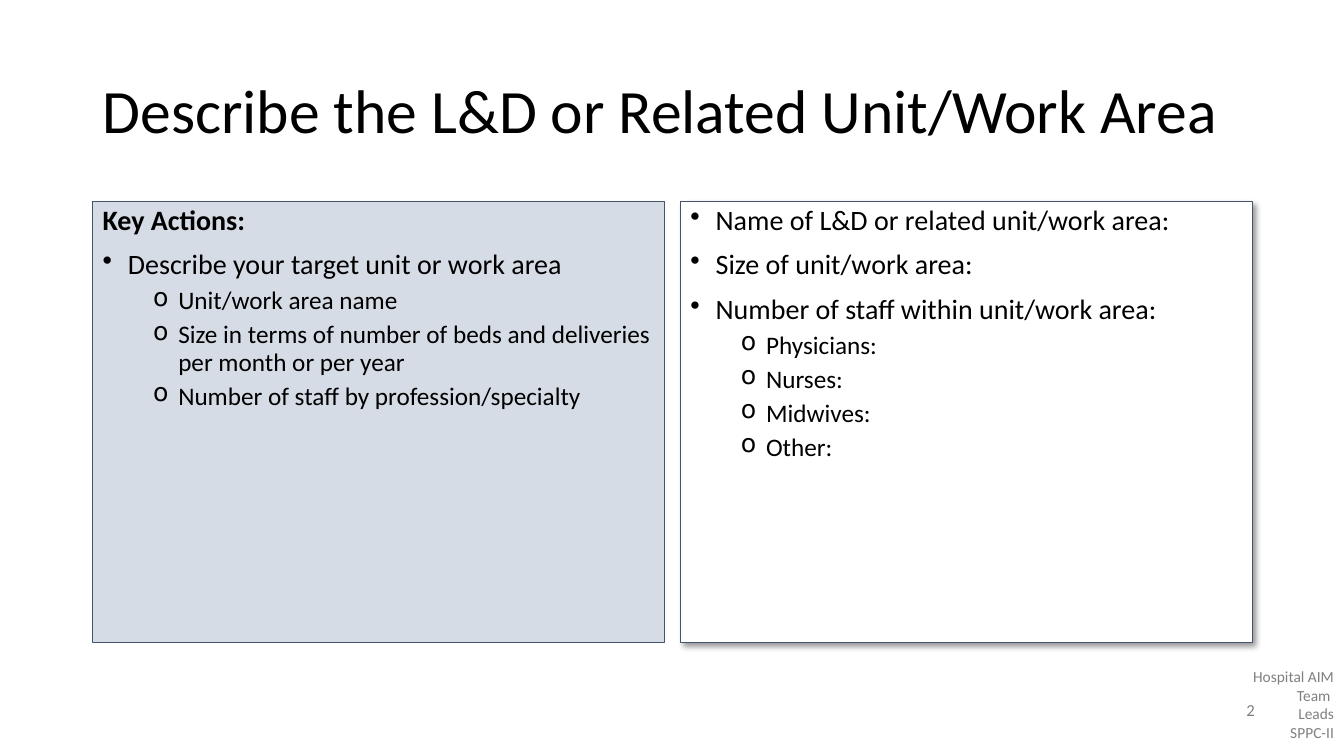
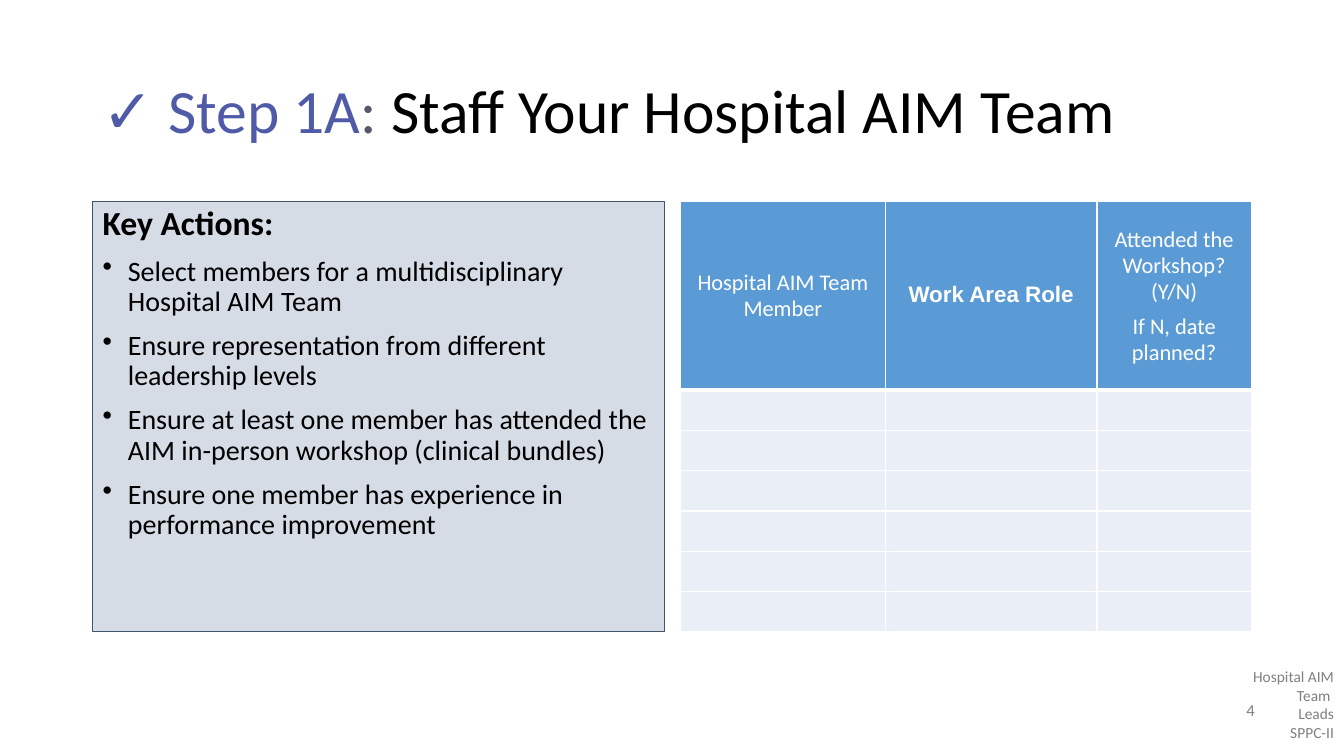
from dataclasses import dataclass

from lxml.etree import SubElement
from pptx import Presentation
from pptx.dml.color import RGBColor
from pptx.enum.shapes import MSO_SHAPE
from pptx.enum.text import MSO_ANCHOR, PP_ALIGN
from pptx.oxml.ns import qn
from pptx.util import Inches, Pt

FOOT = ["Hospital AIM Team ", "Leads", "SPPC-II"]

SLIDES = [
    {
        "page": "2",
        "title": [("Describe the L&D or Related Unit/Work Area", "black")],
        "tall": 4.37,
        "left": [
            ("head", "Key Actions:"),
            ("dot", "Describe your target unit or work area"),
            ("ring", "Unit/work area name"),
            ("ring", "Size in terms of number of beds and deliveries per month or per year"),
            ("ring", "Number of staff by profession/specialty"),
        ],
        "right": [
            ("dot", "Name of L&D or related unit/work area:"),
            ("dot", "Size of unit/work area:"),
            ("dot", "Number of staff within unit/work area:"),
            ("ring", "Physicians:"),
            ("ring", "Nurses:"),
            ("ring", "Midwives:"),
            ("ring", "Other:"),
        ],
    },
    {
        "page": "4",
        "title": [
            ("✓ Step 1A", "step"),
            (": ", "colon"),
            ("Staff Your Hospital AIM Team", "black"),
        ],
        "tall": 4.27,
        "left": [
            ("lead", "Key Actions:"),
            ("dot", "Select members for a multidisciplinary Hospital AIM Team"),
            ("dot", "Ensure representation from different leadership levels"),
            ("dot", "Ensure at least one member has attended the AIM in-person workshop (clinical bundles)"),
            ("dot", "Ensure one member has experience in performance improvement"),
        ],
        "table": {
            "heads": [
                (["Hospital AIM Team Member"], 2.03),
                (["Work Area Role"], 2.1),
                (["Attended the Workshop? (Y/N)", "If N, date planned?"], 1.53),
            ],
            "strong": 1,
            "blanks": 6,
        },
    },
]


@dataclass(frozen=True)
class Theme:
    font: str = "Calibri"
    alt: str = "Arial"
    black: str = "000000"
    white: str = "FFFFFF"
    grey: str = "808080"
    step: str = "505BA7"
    colon: str = "57576E"
    panel: str = "D6DCE5"
    edge: str = "44546A"
    head: str = "5B9BD5"
    row: str = "EAEFF7"
    title: int = 44
    cell: int = 16
    page: int = 12
    foot: int = 11


T = Theme()
WIDE, HIGH = 13.33, 7.5
LEFT, TOP, SPAN, GAP = 0.92, 2, 11.5, 0.16
COL = (SPAN - GAP) / 2
RIGHT = LEFT + COL + GAP
ROW = 0.4

STYLES = {
    "head": (20, True, 10, 0, None),
    "lead": (24, True, 10, 0, None),
    "dot": (20, False, 10, 0.25, "•"),
    "ring": (18, False, 5, 0.75, "o"),
}


def paint(run, size, tint, bold=False, face=T.font):
    font = run.font
    font.name, font.size, font.bold = face, Pt(size), bold
    font.color.rgb = RGBColor.from_string(tint)


def fill(part, tint):
    part.fill.solid()
    part.fill.fore_color.rgb = RGBColor.from_string(tint)


def write(frame, lines, size, tint, align, bold=False, face=T.font):
    frame.word_wrap = True
    frame.text = "\n".join(lines)
    for para in frame.paragraphs:
        para.alignment = align
        paint(para.runs[0], size, tint, bold, face)


def text_box(slide, *place):
    frame = slide.shapes.add_textbox(*map(Inches, place)).text_frame
    frame.word_wrap = True
    return frame


def add_frame(slide, data):
    foot = text_box(slide, WIDE - 1.16, 6.57, 1.16, 0.84)
    write(foot, FOOT, T.foot, T.grey, PP_ALIGN.RIGHT)
    title = text_box(slide, LEFT, 0.4, SPAN, 1.45)
    title.vertical_anchor = MSO_ANCHOR.MIDDLE
    para = title.paragraphs[0]
    para.line_spacing = 0.9
    for text, tint in data["title"]:
        run = para.add_run()
        run.text = text
        paint(run, T.title, getattr(T, tint))
    page = text_box(slide, 12.17, 6.84, 0.47, 0.4)
    page.vertical_anchor = MSO_ANCHOR.MIDDLE
    write(page, [data["page"]], T.page, T.grey, PP_ALIGN.CENTER)


def add_shade(shape):
    box = shape._element.spPr.find(qn("a:effectLst"))
    shade = SubElement(box, qn("a:outerShdw"), blurRad=str(Pt(4)),
                       dist=str(Pt(3)), dir=str(45 * 60000),
                       algn="tl", rotWithShape="0")
    tint = SubElement(shade, qn("a:srgbClr"), val=T.black)
    SubElement(tint, qn("a:alpha"), val="40000")


def add_panel(slide, left, tall, items, tint, shade=False):
    place = map(Inches, (left, TOP, COL, tall))
    shape = slide.shapes.add_shape(MSO_SHAPE.RECTANGLE, *place)
    shape.shadow.inherit = False
    fill(shape, tint)
    shape.line.color.rgb = RGBColor.from_string(T.edge)
    shape.line.width = Pt(0.75)
    if shade:
        add_shade(shape)
    frame = shape.text_frame
    frame.vertical_anchor = MSO_ANCHOR.TOP
    frame.word_wrap = True
    frame.text = "\n".join(text for _, text in items)
    for spot, (para, (kind, _)) in enumerate(zip(frame.paragraphs, items)):
        size, bold, space, dent, mark = STYLES[kind]
        para.alignment = PP_ALIGN.LEFT
        para.line_spacing = 0.9
        para.space_before = Pt(space if spot else 0)
        if mark:
            props = para._p.get_or_add_pPr()
            props.set("marL", str(Inches(dent)))
            props.set("indent", str(Inches(-0.25)))
            SubElement(props, qn("a:buChar"), char=mark)
        paint(para.runs[0], size, T.black, bold)


def add_rules(cell, base):
    props = cell._tc.get_or_add_tcPr()
    sides = {"lnL": 1, "lnR": 1, "lnT": 1, "lnB": base}
    for side, width in sides.items():
        line = SubElement(props, qn("a:" + side), w=str(Pt(width)))
        solid = SubElement(line, qn("a:solidFill"))
        SubElement(solid, qn("a:srgbClr"), val=T.white)


def add_grid(slide, tall, data):
    heads, blanks = data["heads"], data["blanks"]
    place = map(Inches, (RIGHT, TOP, COL, tall))
    table = slide.shapes.add_table(blanks + 1, len(heads), *place).table
    for col, (_, width) in zip(table.columns, heads):
        col.width = Inches(width)
    for num, row in enumerate(table.rows):
        row.height = Inches(ROW if num else tall - blanks * ROW)
        for spot, cell in enumerate(row.cells):
            cell.margin_left = cell.margin_right = Inches(0.05)
            cell.margin_top = cell.margin_bottom = Inches(0.04)
            cell.vertical_anchor = MSO_ANCHOR.MIDDLE
            add_rules(cell, 1 if num else 3)
            fill(cell, T.row if num else T.head)
            if num:
                continue
            strong = spot == data["strong"]
            write(cell.text_frame, heads[spot][0], T.cell, T.white,
                  PP_ALIGN.CENTER, strong, T.alt if strong else T.font)
            for turn, para in enumerate(cell.text_frame.paragraphs):
                para.line_spacing = 0.95
                para.space_before = Pt(0.4 * T.cell if turn else 0)


def main():
    deck = Presentation()
    deck.slide_width, deck.slide_height = Inches(WIDE), Inches(HIGH)
    for data in SLIDES:
        slide = deck.slides.add_slide(deck.slide_layouts[6])
        add_frame(slide, data)
        add_panel(slide, LEFT, data["tall"], data["left"], T.panel)
        if "right" in data:
            add_panel(slide, RIGHT, data["tall"], data["right"], T.white, True)
        if "table" in data:
            add_grid(slide, data["tall"], data["table"])
    deck.save("out.pptx")


if __name__ == "__main__":
    main()
